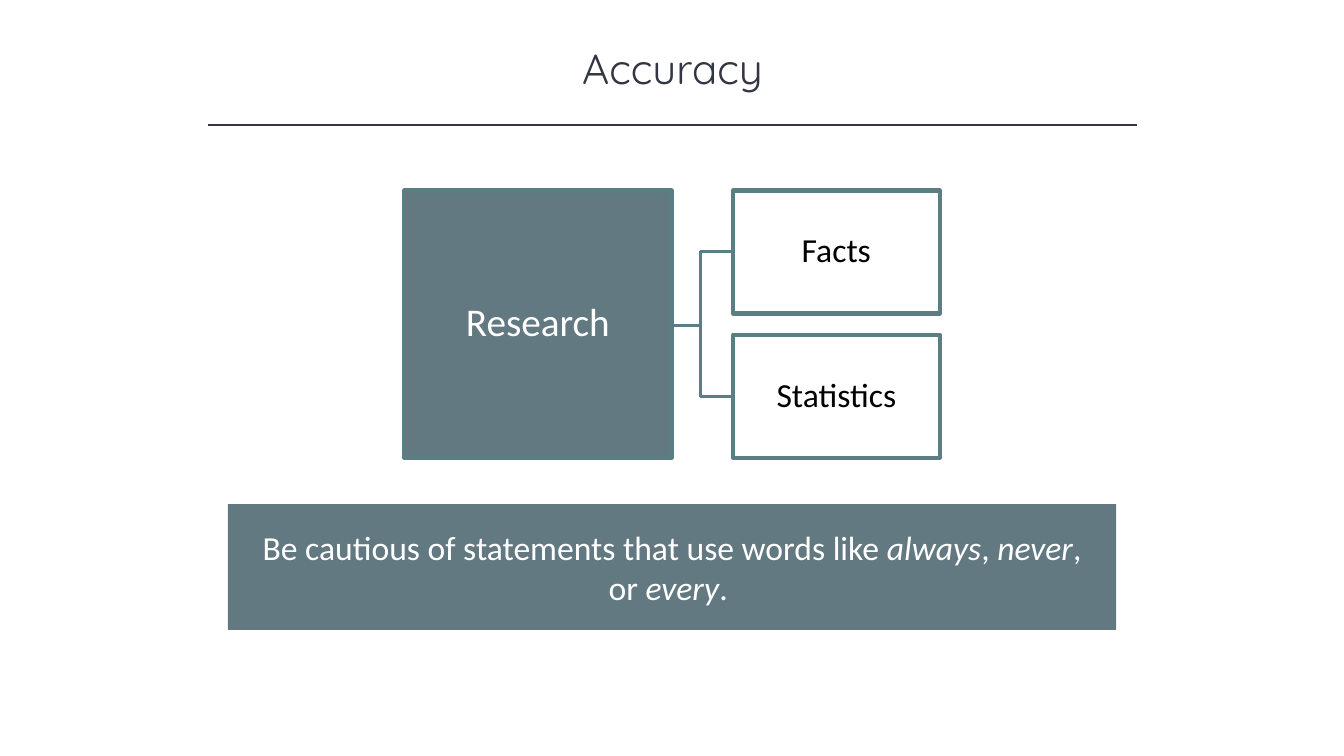
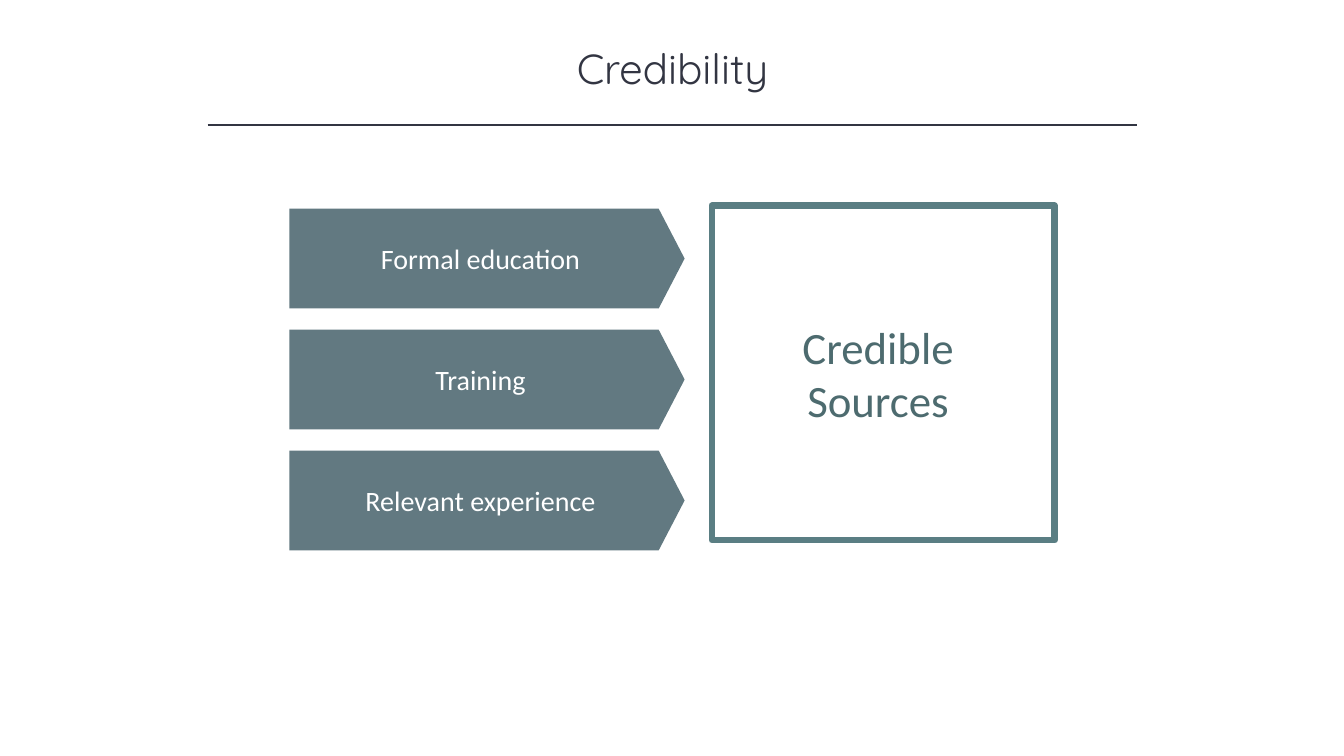
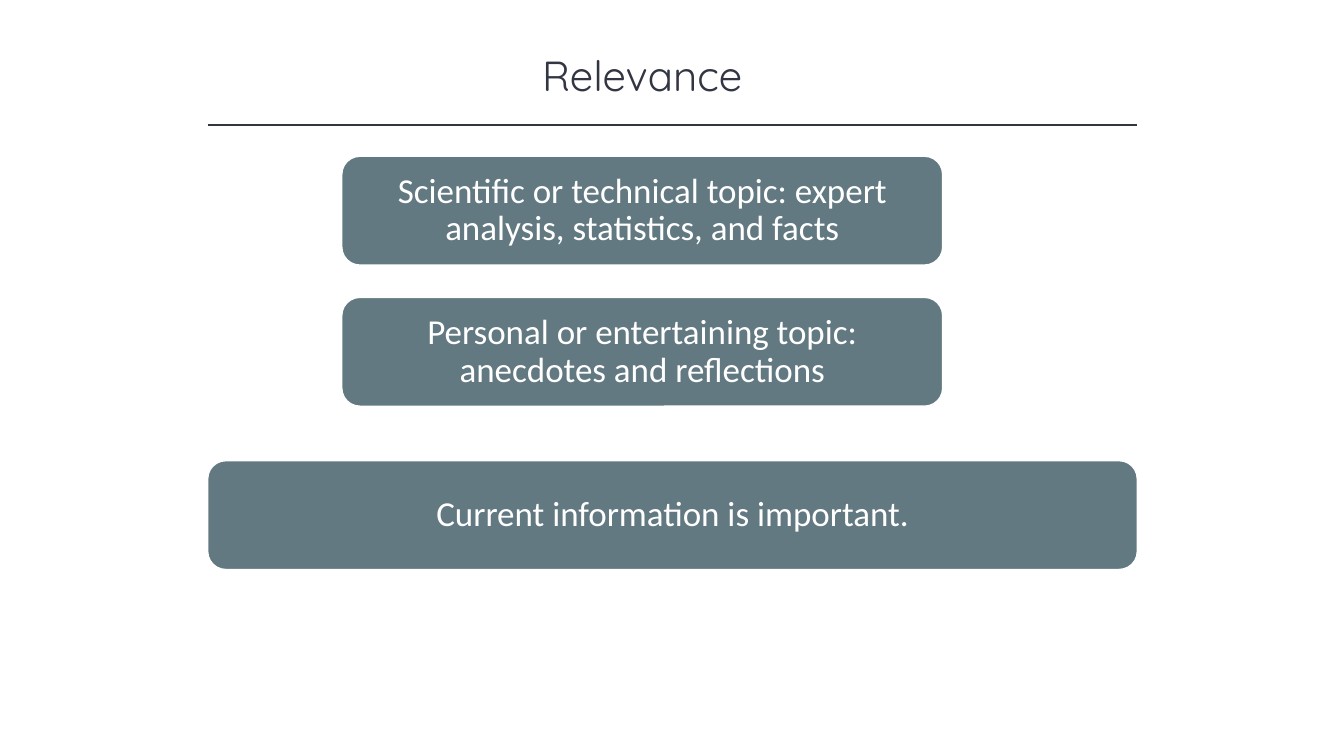
"""Build three slides on accuracy, credibility and relevance of sources."""
from dataclasses import dataclass

from lxml import etree
from pptx import Presentation
from pptx.dml.color import RGBColor
from pptx.enum.shapes import MSO_CONNECTOR, MSO_SHAPE
from pptx.enum.text import MSO_ANCHOR, MSO_AUTO_SIZE, PP_ALIGN
from pptx.oxml.ns import qn
from pptx.util import Emu, Pt

EMU_PER_PX = 9144
TITLE_ONLY = 5
CENTER = PP_ALIGN.CENTER
TOP, MIDDLE = MSO_ANCHOR.TOP, MSO_ANCHOR.MIDDLE
NO_AUTOFIT = MSO_AUTO_SIZE.NONE
STRAIGHT, ELBOW = MSO_CONNECTOR.STRAIGHT, MSO_CONNECTOR.ELBOW
RECTANGLE = MSO_SHAPE.RECTANGLE
ROUNDED = MSO_SHAPE.ROUNDED_RECTANGLE
ARROW = MSO_SHAPE.PENTAGON


@dataclass(frozen=True)
class Theme:
    """Colours, fonts and type sizes of the deck."""
    ink: str = "323542"
    slate: str = "627981"
    teal: str = "5A7E83"
    deep_teal: str = "4D6B6F"
    white: str = "FFFFFF"
    black: str = "000000"
    title_font: str = "Quicksand"
    body_font: str = "Calibri"
    title_size: int = 30
    outcome_size: int = 32
    topic_size: int = 28
    card_size: int = 25
    detail_size: int = 24
    arrow_size: int = 20


THEME = Theme()


def px(length):
    """Turn whole px into EMU."""
    return Emu(length * EMU_PER_PX)


def rgb(color):
    """Turn a hex string into a colour."""
    return RGBColor.from_string(color)


def write(paragraph, text, size, color, font=THEME.body_font, italic=False):
    """Add one formatted run to a centred paragraph."""
    paragraph.alignment = CENTER
    run = paragraph.add_run()
    run.text = text
    run.font.size = Pt(size)
    run.font.name = font
    run.font.color.rgb = rgb(color)
    run.font.italic = italic


def add_rule(slide, kind, start, end, color, width):
    """Draw a connector without a shadow."""
    rule = slide.shapes.add_connector(kind, *map(px, start + end))
    rule.line.color.rgb = rgb(color)
    rule.line.width = Pt(width)
    etree.SubElement(rule.element.spPr, qn("a:effectLst"))


def add_titled_slide(deck, heading, left=167, top=37):
    """Add a slide with its heading and the line below it."""
    slide = deck.slides.add_slide(deck.slide_layouts[TITLE_ONLY])
    title = slide.shapes.title
    title.left, title.top = px(left), px(top)
    title.width, title.height = px(1000), px(61)
    frame = title.text_frame
    frame.auto_size = NO_AUTOFIT
    frame.vertical_anchor = TOP
    write(frame.paragraphs[0], heading, THEME.title_size, THEME.ink, THEME.title_font)
    add_rule(slide, STRAIGHT, (206, 124), (1128, 124), THEME.ink, 1)
    return slide


def add_box(slide, kind, bounds, fill, border=None, border_width=1, inset=10):
    """Draw a filled shape and return its text frame."""
    box = slide.shapes.add_shape(kind, *map(px, bounds))
    box.shadow.inherit = False
    box.fill.solid()
    box.fill.fore_color.rgb = rgb(fill)
    if border:
        box.line.color.rgb = rgb(border)
        box.line.width = Pt(border_width)
    else:
        box.line.fill.background()
    if kind == ARROW:
        box.adjustments[0] = 0.26
    frame = box.text_frame
    frame.word_wrap = True
    frame.vertical_anchor = MIDDLE
    frame.margin_left = frame.margin_right = px(inset)
    return frame


def add_label(frame, text, size, color, line_spacing=0.9):
    """Write one line of text into the first paragraph of a shape."""
    paragraph = frame.paragraphs[0]
    paragraph.line_spacing = line_spacing
    write(paragraph, text, size, color)


def build_accuracy(deck):
    """Show research leading to facts and statistics."""
    slide = add_titled_slide(deck, "Accuracy")
    details = [(name, 189 + 143 * row) for row, name in enumerate(("Facts", "Statistics"))]
    for _, top in details:
        add_rule(slide, ELBOW, (651, 323), (739, top + 61), THEME.teal, 2.25)
    research = add_box(slide, RECTANGLE, (401, 189, 265, 265), THEME.slate, THEME.teal, 3)
    add_label(research, "Research", THEME.topic_size, THEME.white)
    for name, top in details:
        detail = add_box(slide, RECTANGLE, (727, top, 205, 122), THEME.white, THEME.teal, 3)
        add_label(detail, name, THEME.detail_size, THEME.black)

    caution = add_box(slide, RECTANGLE, (226, 500, 881, 125), THEME.slate, inset=24)
    for text, italic in (
        ("Be cautious of statements that use words like ", False),
        ("always", True),
        (", ", False),
        ("never", True),
        (", or ", False),
        ("every", True),
        (". ", False),
    ):
        write(caution.paragraphs[0], text, THEME.detail_size, THEME.white, italic=italic)


def build_credibility(deck):
    """Show three qualities pointing to credible sources."""
    slide = add_titled_slide(deck, "Credibility")
    outcome = add_box(slide, RECTANGLE, (706, 204, 340, 332), THEME.white, THEME.teal, 4.5)
    add_label(outcome, "Credible ", THEME.outcome_size, THEME.deep_teal, 1)
    write(outcome.add_paragraph(), "Sources ", THEME.outcome_size, THEME.deep_teal)
    qualities = ("Formal education", "Training", "Relevant experience")
    for row, quality in enumerate(qualities):
        arrow = add_box(slide, ARROW, (287, 207 + 120 * row, 392, 99), THEME.slate)
        add_label(arrow, quality, THEME.arrow_size, THEME.white, 1)


def build_relevance(deck):
    """Show which support suits which topic."""
    slide = add_titled_slide(deck, "Relevance", left=137, top=44)
    for left, top, width, advice in (
        (339, 155, 596, "Scientific or technical topic: expert analysis, statistics, and facts"),
        (339, 295, 596, "Personal or entertaining topic: anecdotes and reflections"),
        (206, 457, 922, "Current information is important."),
    ):
        card = add_box(slide, ROUNDED, (left, top, width, 108), THEME.slate, THEME.white, inset=21)
        add_label(card, advice, THEME.card_size, THEME.white)


def main():
    """Build and save the deck."""
    deck = Presentation()
    deck.slide_width, deck.slide_height = px(1333), px(750)
    build_accuracy(deck)
    build_credibility(deck)
    build_relevance(deck)
    deck.save("out.pptx")


if __name__ == "__main__":
    main()
